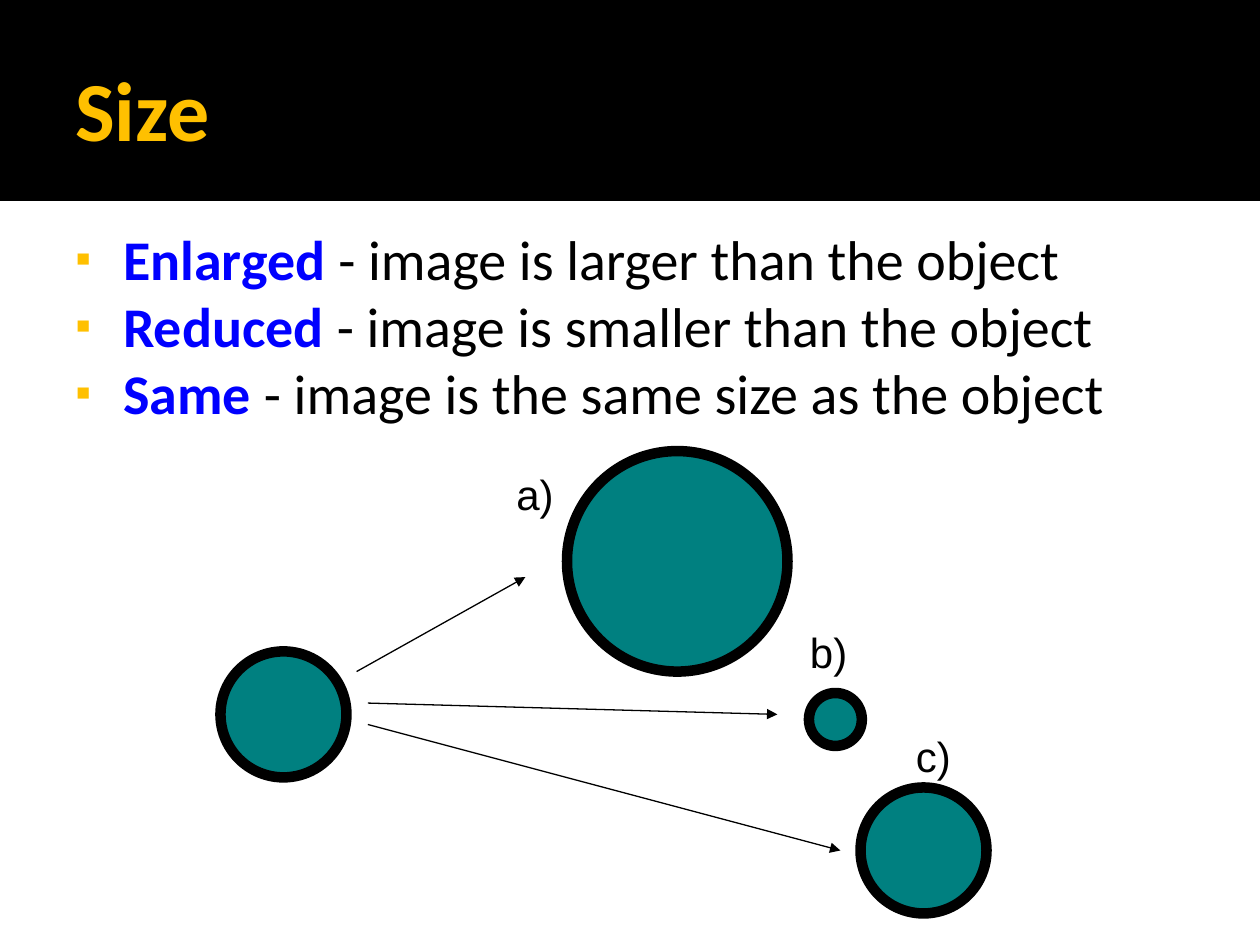
"""Builds a slide on image size: enlarged, reduced and same."""
from dataclasses import dataclass

from lxml import etree
from pptx import Presentation
from pptx import util as u
from pptx.dml.color import RGBColor
from pptx.enum import shapes, text
from pptx.oxml.ns import qn


@dataclass(frozen=True)
class Theme:
    black: str = "000000"
    gold: str = "FFC000"
    blue: str = "0000FF"
    teal: str = "008080"
    heading_font: str = "Calibri"
    label_font: str = "Arial"
    title_size: int = 48
    body_size: int = 32
    label_size: int = 24


class SlideBuilder:
    def __init__(self, page, theme):
        self.page = page
        self.theme = theme

    def shape(self, kind, left, top, width, height, fill, line_width):
        shape = self.page.shapes.add_shape(
            kind, *map(u.Inches, (left, top, width, height)))
        shape.shadow.inherit = False
        shape.fill.solid()
        shape.fill.fore_color.rgb = RGBColor.from_string(fill)
        shape.line.color.rgb = RGBColor.from_string(self.theme.black)
        shape.line.width = u.Pt(line_width)

    def circle(self, left, top, size):
        self.shape(shapes.MSO_SHAPE.OVAL, left, top, size, size, self.theme.teal, 6)

    def arrow(self, start, end):
        arrow = self.page.shapes.add_connector(
            shapes.MSO_CONNECTOR.STRAIGHT, *map(u.Inches, (*start, *end)))
        arrow.line.color.rgb = RGBColor.from_string(self.theme.black)
        arrow.line.width = u.Pt(0.75)
        etree.SubElement(arrow.line._get_or_add_ln(), qn("a:tailEnd"), type="triangle")
        etree.SubElement(arrow._element.spPr, qn("a:effectLst"))

    def frame(self, left, top, width, height, anchor=text.MSO_ANCHOR.TOP):
        box = self.page.shapes.add_textbox(
            *map(u.Inches, (left, top, width, height)))
        box.text_frame.word_wrap = True
        box.text_frame.vertical_anchor = anchor
        return box.text_frame

    def style(self, font, name, size, color, bold=False):
        font.name = name
        font.size = u.Pt(size)
        font.bold = bold
        font.color.rgb = RGBColor.from_string(color)

    def title(self, wording):
        theme = self.theme
        frame = self.frame(0.5, 0.17, 9, 1.37, text.MSO_ANCHOR.MIDDLE)
        paragraph = frame.paragraphs[0]
        paragraph.text = wording
        self.style(paragraph.font, theme.heading_font, theme.title_size, theme.gold, True)

    def label(self, wording, left, top):
        theme = self.theme
        frame = self.frame(left, top, 0.75, 0.5)
        frame.auto_size = text.MSO_AUTO_SIZE.SHAPE_TO_FIT_TEXT
        paragraph = frame.paragraphs[0]
        paragraph.text = wording
        self.style(paragraph.font, theme.label_font, theme.label_size, theme.black)

    def bullet(self, paragraph):
        indent = u.Inches(0.38)
        properties = paragraph._p.get_or_add_pPr()
        properties.set("marL", str(indent))
        properties.set("indent", str(-indent))
        color = etree.SubElement(properties, qn("a:buClr"))
        etree.SubElement(color, qn("a:srgbClr"), val=self.theme.gold)
        etree.SubElement(properties, qn("a:buSzPct"), val="80000")
        etree.SubElement(properties, qn("a:buFont"), typeface=self.theme.label_font)
        etree.SubElement(properties, qn("a:buChar"), char="▪")

    def definitions(self, entries):
        theme = self.theme
        frame = self.frame(0.5, 1.73, 9, 5.06)
        for index, (term, meaning) in enumerate(entries):
            paragraph = frame.add_paragraph() if index else frame.paragraphs[0]
            self.bullet(paragraph)
            for wording, color, bold in ((term, theme.blue, True),
                                         (f" - {meaning}", theme.black, False)):
                span = paragraph.add_run()
                span.text = wording
                self.style(span.font, theme.heading_font, theme.body_size, color, bold)


def main():
    deck = Presentation()
    deck.slide_width, deck.slide_height = u.Inches(10), u.Inches(7.5)
    theme = Theme()
    slide = SlideBuilder(deck.slides.add_slide(deck.slide_layouts[6]), theme)

    slide.shape(shapes.MSO_SHAPE.RECTANGLE, 0, 0, 10, 1.58, theme.black, 2)
    slide.title("Size")
    slide.definitions([
        ("Enlarged", "image is larger than the object"),
        ("Reduced", "image is smaller than the object"),
        ("Same", "image is the same size as the object"),
    ])
    for circle in ((1.75, 5.17, 1), (6.83, 6.25, 1), (4.5, 3.58, 1.75), (6.42, 5.5, 0.42)):
        slide.circle(*circle)
    for start, end in (((2.83, 5.33), (4.17, 4.58)),
                       ((2.92, 5.58), (6.17, 5.67)),
                       ((2.92, 5.75), (6.67, 6.75))):
        slide.arrow(start, end)
    for label in (("a)", 4, 3.67), ("b)", 6.33, 4.92), ("c)", 7.17, 5.75)):
        slide.label(*label)

    deck.save("out.pptx")


if __name__ == "__main__":
    main()
